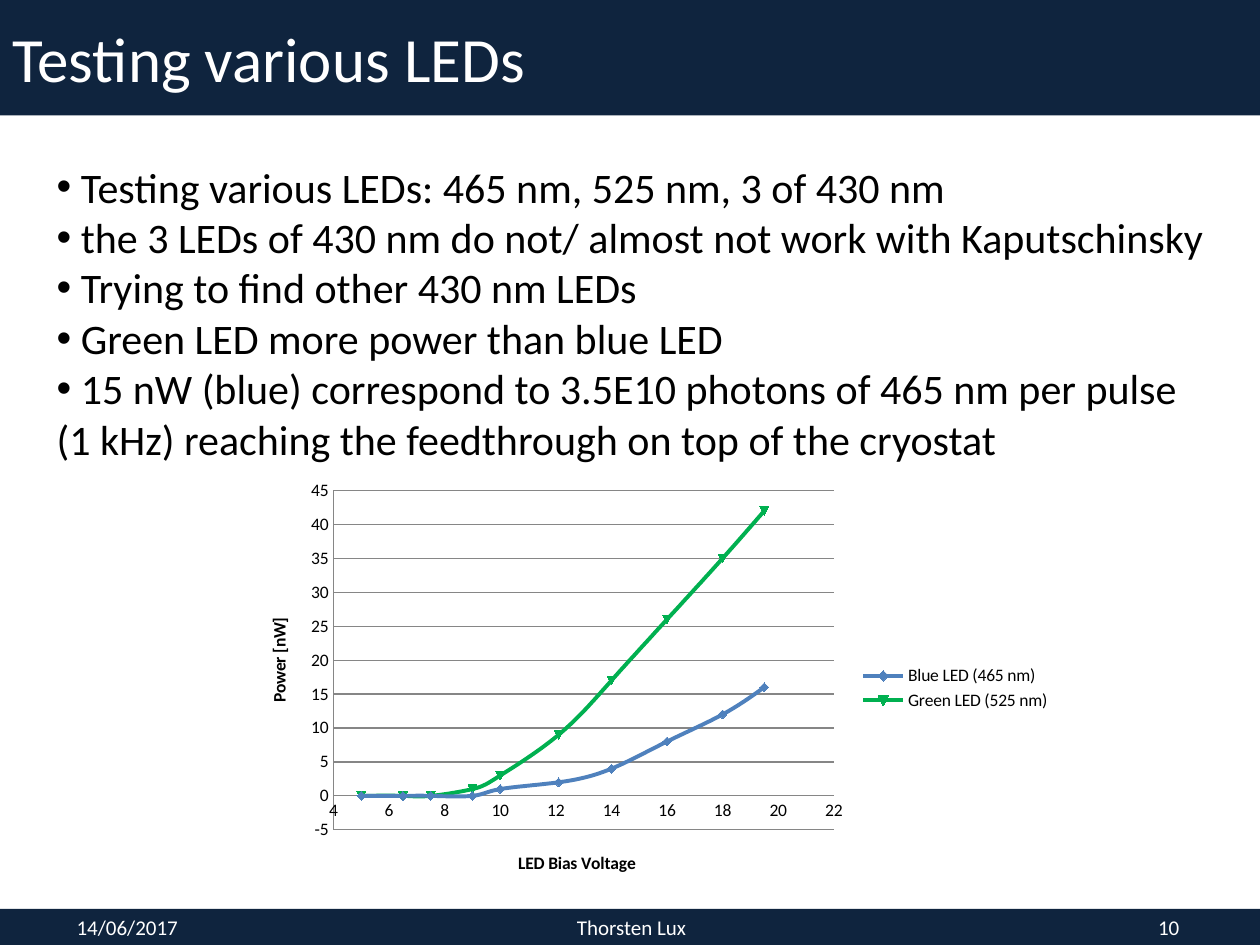
"""Build the slide on testing various LEDs."""
from lxml import etree
from pptx import Presentation
from pptx.chart.data import XyChartData
from pptx.dml.color import RGBColor
from pptx.enum.chart import (XL_CHART_TYPE, XL_LEGEND_POSITION,
                             XL_MARKER_STYLE, XL_TICK_MARK)
from pptx.enum.shapes import MSO_SHAPE
from pptx.enum.text import MSO_ANCHOR, MSO_AUTO_SIZE, PP_ALIGN
from pptx.oxml.ns import qn
from pptx.util import Pt

SMOOTH = XL_CHART_TYPE.XY_SCATTER_SMOOTH
RIGHT_KEY = XL_LEGEND_POSITION.RIGHT
DIAMOND, AUTO = XL_MARKER_STYLE.DIAMOND, XL_MARKER_STYLE.AUTOMATIC
NO_TICK = XL_TICK_MARK.NONE
RECT = MSO_SHAPE.RECTANGLE
MIDDLE = MSO_ANCHOR.MIDDLE
NO_FIT = MSO_AUTO_SIZE.NONE
LEFT, CENTER, RIGHT = PP_ALIGN.LEFT, PP_ALIGN.CENTER, PP_ALIGN.RIGHT

NAVY = RGBColor(0x0F, 0x24, 0x3E)
WHITE = RGBColor(0xFF, 0xFF, 0xFF)
BLACK = RGBColor(0, 0, 0)
GRAY = RGBColor(0x86, 0x86, 0x86)
BLUE = RGBColor(0x4F, 0x81, 0xBD)
GREEN = RGBColor(0x00, 0xB0, 0x50)
FACE = "Calibri"

HEAD = (0, 0, 720, 66)
FOOT_TOP, FOOT_TALL = 519.4, 20.6
BODY = (25.2, 88.5, 674.6, 181.4)
CHART = (139, 270.5, 468.7, 245.5)
PLOT = {"x": 0.11, "y": 0.04, "w": 0.61, "h": 0.79}

POINTS = [
    " Testing various LEDs: 465 nm, 525 nm, 3 of 430 nm",
    " the 3 LEDs of 430 nm do not/ almost not work with Kaputschinsky",
    " Trying to find other 430 nm LEDs",
    " Green LED more power than blue LED",
    " 15 nW (blue) correspond to 3.5E10 photons of 465 nm per pulse "
    "(1 kHz) reaching the feedthrough on top of the cryostat",
]
FOOTER = [
    ("14/06/2017", 36.7, 167.8, LEFT),
    ("Thorsten Lux", 246.8, 228.2, CENTER),
    ("10", 513.2, 167.8, RIGHT),
]
VOLTS = [5, 6.5, 7.5, 9, 10, 12.1, 14, 16, 18, 19.5]
SERIES = [
    ("Blue LED (465 nm)", BLUE, DIAMOND, [0, 0, 0, 0, 1, 2, 4, 8, 12, 16]),
    ("Green LED (525 nm)", GREEN, AUTO, [0, 0, 0, 1, 3, 9, 17, 26, 35, 42]),
]


def place(shape, box):
    """Move and size a shape to a box in points."""
    shape.left, shape.top, shape.width, shape.height = map(Pt, box)


def style(font, size, color, bold=False):
    """Set face, size, colour and weight of a font."""
    font.name, font.size, font.bold = FACE, Pt(size), bold
    font.color.rgb = color


def add_band(slide, box):
    """Add a navy band behind the title."""
    band = slide.shapes.add_shape(RECT, *map(Pt, box))
    band.shadow.inherit = False
    band.fill.solid()
    band.fill.fore_color.rgb = NAVY
    band.line.fill.background()
    slide.shapes.title.element.addprevious(band.element)


def fill_title(shape, text):
    """Write the title in its placeholder."""
    place(shape, HEAD)
    frame = shape.text_frame
    frame.text = text
    frame.vertical_anchor = MIDDLE
    frame.auto_size = NO_FIT
    para = frame.paragraphs[0]
    para.alignment = LEFT
    style(para.font, 36, WHITE)


def fill_list(shape, lines):
    """Write the bullet list with wrapped lines flush left."""
    place(shape, BODY)
    frame = shape.text_frame
    frame.text = "\n".join(lines)
    frame.auto_size = NO_FIT
    for para in frame.paragraphs:
        para.space_before = Pt(0)
        style(para.font, 24, BLACK)
    for props in shape.element.iter(qn("a:pPr")):
        props.set("marL", "0")
        props.set("indent", "0")


def add_note(slide, text, left, width, align):
    """Add one footer text."""
    box = slide.shapes.add_textbox(
        *map(Pt, (left, FOOT_TOP, width, FOOT_TALL)))
    frame = box.text_frame
    frame.word_wrap = True
    frame.vertical_anchor = MIDDLE
    frame.text = text
    para = frame.paragraphs[0]
    para.alignment = align
    style(para.font, 12, WHITE)


def set_axis(axis, title, low, high, step):
    """Set title, scale and lines of an axis."""
    frame = axis.axis_title.text_frame
    frame.text = title
    style(frame.paragraphs[0].font, 10, BLACK, True)
    axis.minimum_scale, axis.maximum_scale = low, high
    axis.major_unit = step
    axis.major_tick_mark = axis.minor_tick_mark = NO_TICK
    axis.format.line.color.rgb = GRAY
    axis.format.line.width = Pt(0.75)
    labels = axis.tick_labels
    labels.number_format, labels.number_format_is_linked = "General", False


def set_plot(chart):
    """Smooth the lines and fix the inner plot area."""
    for smooth in chart.element.iter(qn("c:smooth")):
        smooth.set("val", "1")
    area = chart.element.find(".//" + qn("c:plotArea"))
    for old in area.findall(qn("c:layout")):
        area.remove(old)
    layout = etree.Element(qn("c:layout"))
    area.insert(0, layout)
    manual = etree.SubElement(layout, qn("c:manualLayout"))
    rules = {"layoutTarget": "inner", "xMode": "edge", "yMode": "edge", **PLOT}
    for name, value in rules.items():
        etree.SubElement(manual, qn("c:" + name)).set("val", str(value))


def add_graph(slide):
    """Add the scatter chart of power against voltage."""
    data = XyChartData()
    for name, _, _, powers in SERIES:
        series = data.add_series(name)
        for volt, power in zip(VOLTS, powers):
            series.add_data_point(volt, power)
    chart = slide.shapes.add_chart(SMOOTH, *map(Pt, CHART), data).chart
    style(chart.font, 10, BLACK)
    chart.has_title = False
    chart.has_legend = True
    chart.legend.position = RIGHT_KEY
    chart.legend.include_in_layout = False
    set_axis(chart.category_axis, "LED Bias Voltage", 4, 22, 2)
    set_axis(chart.value_axis, "Power [nW]", -5, 45, 5)
    chart.category_axis.has_major_gridlines = False
    chart.value_axis.has_major_gridlines = True
    grid = chart.value_axis.major_gridlines.format.line
    grid.color.rgb, grid.width = GRAY, Pt(0.75)
    plot = chart.plots[0]
    plot.vary_by_categories = False
    for series, (_, color, mark, _) in zip(plot.series, SERIES):
        series.format.line.color.rgb = color
        series.format.line.width = Pt(2.25)
        series.marker.style, series.marker.size = mark, 5
        look = series.marker.format
        look.fill.solid()
        look.fill.fore_color.rgb = color
        look.line.color.rgb = color
    set_plot(chart)


def main():
    """Build and save the slide."""
    deck = Presentation()
    deck.slide_width, deck.slide_height = Pt(720), Pt(540)
    slide = deck.slides.add_slide(deck.slide_layouts[1])
    add_band(slide, (0, FOOT_TOP, 720, FOOT_TALL))
    add_band(slide, HEAD)
    fill_title(slide.shapes.title, "Testing various LEDs")
    fill_list(slide.placeholders[1], POINTS)
    for note in FOOTER:
        add_note(slide, *note)
    add_graph(slide)
    deck.save("out.pptx")


if __name__ == "__main__":
    main()
